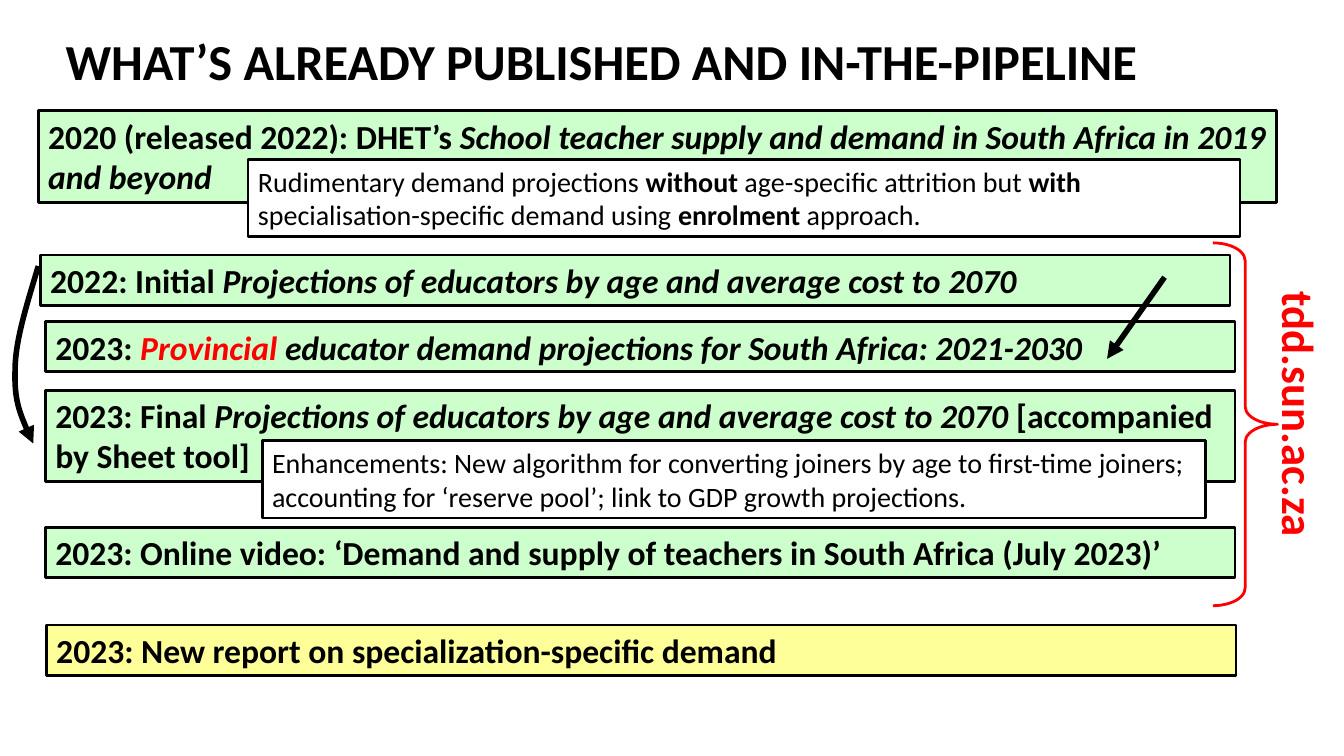
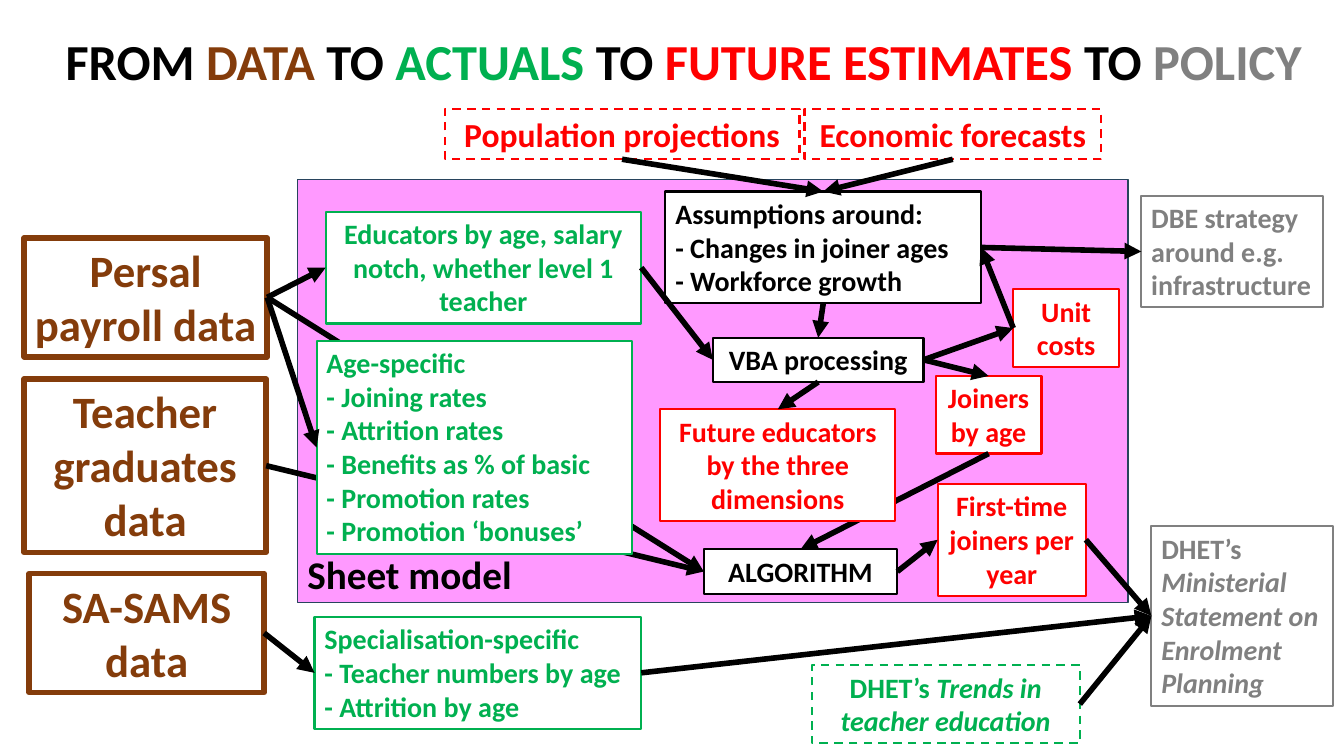
"""Two slides on teacher demand studies: publications, then the data-to-policy flow."""
from pptx import Presentation
from pptx.dml.color import RGBColor
from pptx.enum import dml, shapes, text
from pptx.oxml.ns import qn
from pptx.util import Inches, Pt
from lxml import etree

COLORS = {
    "black": "000000", "white": "FFFFFF", "red": "FF0000", "green": "00B050",
    "brown": "843C0B", "grey": "808080", "mint": "CCFFCC", "lemon": "FFFF99",
    "pink": "FF99FF", "navy": "28445D",
}
RECTANGLE = shapes.MSO_SHAPE.RECTANGLE
CENTER, LEFT = text.PP_ALIGN.CENTER, text.PP_ALIGN.LEFT
TOP, RIGHT, BOTTOM, LEFT_SIDE = 0, 3, 2, 1


def write(shape, *paragraphs, size=20, ink="black", bold=True, align=LEFT, fill=None,
          outline=0, edge=None, dash=False, anchor=text.MSO_ANCHOR.TOP, grow=True):
    """Fill, outline and letter a shape; a run is a string or (string, font changes)."""
    if fill:
        shape.fill.solid()
        shape.fill.fore_color.rgb = RGBColor.from_string(COLORS[fill])
    else:
        shape.fill.background()
    if outline:
        shape.line.color.rgb = RGBColor.from_string(COLORS[edge or ink])
        shape.line.width = Pt(outline)
        if dash:
            shape.line.dash_style = dml.MSO_LINE.DASH
    shape.shadow.inherit = False
    frame = shape.text_frame
    frame.word_wrap = True
    frame.vertical_anchor = anchor
    frame.auto_size = text.MSO_AUTO_SIZE.SHAPE_TO_FIT_TEXT if grow else text.MSO_AUTO_SIZE.NONE
    for number, content in enumerate(paragraphs):
        paragraph = frame.paragraphs[0] if number == 0 else frame.add_paragraph()
        paragraph.alignment = align
        for piece in [content] if isinstance(content, str) else content:
            words, changes = (piece, {}) if isinstance(piece, str) else piece
            run = paragraph.add_run()
            run.text = words
            run.font.name = "Calibri"
            run.font.size = Pt(size)
            run.font.bold = changes.get("bold", bold)
            run.font.italic = changes.get("italic", False)
            run.font.color.rgb = RGBColor.from_string(COLORS[changes.get("ink", ink)])


def make_arrow(line_shape):
    """Give a line its weight, colour and arrowhead, without a shadow."""
    line_shape.line.color.rgb = RGBColor.from_string(COLORS["black"])
    line_shape.line.width = Pt(4)
    properties = line_shape._element.spPr
    etree.SubElement(properties.find(qn("a:ln")), qn("a:tailEnd"), type="triangle")
    etree.SubElement(properties, qn("a:effectLst"))


deck = Presentation()
deck.slide_width, deck.slide_height = Inches(13.33), Inches(7.5)
ITALIC = {"italic": True}

titles = [
    ["WHAT’S ALREADY PUBLISHED AND IN-THE-PIPELINE"],
    ["FROM ", ("DATA", {"ink": "brown"}), " TO ", ("ACTUALS", {"ink": "green"}), " TO ",
     ("FUTURE ESTIMATES", {"ink": "red"}), " TO ", ("POLICY", {"ink": "grey"})],
]
for title_runs in titles:
    title = deck.slides.add_slide(deck.slide_layouts[5]).shapes.title
    title.left, title.top, title.width, title.height = map(Inches, (0.55, 0.25, 12.52, 0.71))
    write(title, title_runs, size=36)
published, flow = (slide.shapes for slide in deck.slides)

bar = dict(size=24, fill="mint", outline=2)
planned = dict(bar, fill="lemon")
remark = dict(bold=False, fill="white", outline=2)
STRONG = {"bold": True}
publications = [
    (0.38, 1.1, 12.28, 0.91, bar,
     ["2020 (released 2022): DHET’s ",
      ("School teacher supply and demand in South Africa in 2019 and beyond", ITALIC)]),
    (2.46, 1.58, 9.84, 0.77, remark,
     ["Rudimentary demand projections ", ("without", STRONG), " age-specific attrition but ",
      ("with ", STRONG), "specialisation-specific demand using ", ("enrolment ", STRONG),
      "approach."]),
    (0.4, 2.53, 11.8, 0.5, bar,
     ["2022: Initial ", ("Projections of educators by age and average cost to 2070", ITALIC)]),
    (0.45, 3.19, 11.8, 0.5, bar,
     ["2023: ", ("Provincial ", {"italic": True, "ink": "red"}),
      ("educator demand projections for South Africa: 2021-2030", ITALIC)]),
    (0.45, 3.87, 11.8, 0.91, bar,
     ["2023: Final ", ("Projections of educators by age and average cost to 2070 ", ITALIC),
      "[accompanied by Sheet tool]"]),
    (2.6, 4.37, 9.36, 0.77, remark,
     "Enhancements: New algorithm for converting joiners by age to first-time joiners; "
     "accounting for ‘reserve pool’; link to GDP growth projections."),
    (0.45, 5.23, 11.8, 0.5, bar,
     "2023: Online video: ‘Demand and supply of teachers in South Africa (July 2023)’"),
    (0.46, 6.2, 11.8, 0.5, planned, "2023: New report on specialization-specific demand"),
]
for *place, style, content in publications:
    write(published.add_shape(RECTANGLE, *map(Inches, place)), content, **style)

make_arrow(published.add_connector(
    shapes.MSO_CONNECTOR.STRAIGHT, *map(Inches, (11.55, 2.75, 10.98, 3.56))))

curve_points = [(0.27, 3.01), (0.15, 3.38), (0.15, 3.67), (0.14, 3.97), (0.23, 4.19), (0.33, 4.4)]
builder = published.build_freeform(Inches(0.38), Inches(2.64))
builder.add_line_segments([(Inches(x), Inches(y)) for x, y in curve_points], close=False)
initial_to_final = builder.convert_to_shape()
initial_to_final.fill.background()
make_arrow(initial_to_final)
segments = initial_to_final._element.xpath(".//a:lnTo")
for first in range(0, len(segments), 3):
    bend = etree.Element(qn("a:cubicBezTo"))
    segments[first].addprevious(bend)
    for segment in segments[first:first + 3]:
        bend.append(segment[0])
        segment.getparent().remove(segment)

website = published.add_textbox(*map(Inches, (11.54, 3.82, 2.7, 0.64)))
website.rotation = 90
write(website, "tdd.sun.ac.za", size=32, ink="red")

brace = published.add_shape(shapes.MSO_SHAPE.RIGHT_BRACE, *map(Inches, (12.03, 2.41, 0.64, 3.6)))
brace.adjustments[0], brace.adjustments[1] = 0.275, 0.5
brace.fill.background()
brace.line.color.rgb = RGBColor.from_string(COLORS["red"])
brace.line.width = Pt(2)
brace.shadow.inherit = False

model = flow.add_shape(RECTANGLE, *map(Inches, (2.95, 1.78, 8.24, 4.2)))
write(model, "Sheet model", size=28, fill="pink", outline=1, edge="navy",
      anchor=text.MSO_ANCHOR.BOTTOM, grow=False)

source = dict(size=32, ink="brown", outline=4, align=CENTER)
step = dict(fill="white", outline=1.5, align=CENTER)
rules = dict(step, align=LEFT)
actual = dict(step, ink="green")
actual_list = dict(actual, align=LEFT)
estimate = dict(step, ink="red")
forecast = dict(estimate, size=24, dash=True)
policy = dict(rules, ink="grey")

back_boxes = {
    "persal": (0.24, 2.36, 2.41, 1.18, source, "Persal payroll data"),
    "graduates": (0.24, 3.76, 2.4, 1.72, source, "Teacher graduates data"),
    "sasams": (0.29, 5.69, 2.33, 1.18, source, "SA-SAMS data"),
    "population": (4.41, 1.08, 3.52, 0.5, forecast, "Population projections"),
    "economy": (7.98, 1.08, 2.94, 0.5, forecast, "Economic forecasts"),
    "educators": (3.23, 2.1, 3.13, 1.11, actual,
                  "Educators by age, salary notch, whether level 1 teacher"),
    "assumptions": (6.6, 1.9, 3.13, 1.11, rules, "Assumptions around:",
                    "- Changes in joiner ages", "- Workforce growth"),
    "joiners": (9.28, 3.73, 1.05, 0.77, estimate, "Joiners by age"),
    "algorithm": (6.98, 5.45, 1.92, 0.44, step, "ALGORITHM"),
    "vba": (7.07, 3.35, 2.09, 0.44, step, "VBA processing"),
    "specialisation": (3.12, 6.12, 3.24, 1.11, actual_list, "Specialisation-specific",
                       "- Teacher numbers by age", "- Attrition by age"),
    "costs": (10.05, 2.87, 1.05, 0.77, estimate, "Unit costs"),
    "strategy": (11.32, 1.94, 1.8, 1.11, policy, "DBE strategy around e.g. infrastructure"),
    "statement": (11.42, 5.22, 1.8, 1.78, policy,
                  ["DHET’s ", ("Ministerial Statement on Enrolment Planning", ITALIC)]),
    "first_time": (9.3, 4.8, 1.47, 1.11, estimate, "First-time joiners per year"),
    "trends": (8.05, 6.6, 2.66, 0.77, dict(actual, dash=True),
               ["DHET’s ", ("Trends in teacher education", ITALIC)]),
}
front_boxes = {
    "rates": (3.14, 3.38, 3.13, 2.12, actual_list, "Age-specific", "- Joining rates",
              "- Attrition rates", "- Benefits as % of basic", "- Promotion rates",
              "- Promotion ‘bonuses’"),
    "future": (6.55, 4.06, 2.33, 1.11, estimate, "Future educators by the three dimensions"),
}
back_links = [
    ("joiners", BOTTOM, "algorithm", TOP),
    ("graduates", RIGHT, "algorithm", LEFT_SIDE),
    ("persal", RIGHT, "algorithm", LEFT_SIDE),
]
front_links = [
    ("population", BOTTOM, "assumptions", TOP),
    ("economy", BOTTOM, "assumptions", TOP),
    ("persal", RIGHT, "educators", LEFT_SIDE),
    ("persal", RIGHT, "rates", LEFT_SIDE),
    ("sasams", RIGHT, "specialisation", LEFT_SIDE),
    ("educators", RIGHT, "vba", LEFT_SIDE),
    ("assumptions", BOTTOM, "vba", TOP),
    ("assumptions", RIGHT, "strategy", LEFT_SIDE),
    ("vba", BOTTOM, "future", TOP),
    ("vba", RIGHT, "joiners", TOP),
    ("vba", RIGHT, "costs", LEFT_SIDE),
    ("costs", LEFT_SIDE, "assumptions", RIGHT),
    ("algorithm", RIGHT, "first_time", LEFT_SIDE),
    ("first_time", RIGHT, "statement", LEFT_SIDE),
    ("specialisation", RIGHT, "statement", LEFT_SIDE),
    ("trends", RIGHT, "statement", LEFT_SIDE),
]
placed = {}
for boxes, links in ((back_boxes, back_links), (front_boxes, front_links)):
    for key, (left, top, width, height, style, *content) in boxes.items():
        placed[key] = flow.add_shape(RECTANGLE, *map(Inches, (left, top, width, height)))
        write(placed[key], *content, **style)
    for start, start_side, end, end_side in links:
        link = flow.add_connector(shapes.MSO_CONNECTOR.STRAIGHT, 0, 0, 0, 0)
        link.begin_connect(placed[start], start_side)
        link.end_connect(placed[end], end_side)
        make_arrow(link)

deck.save("out.pptx")
